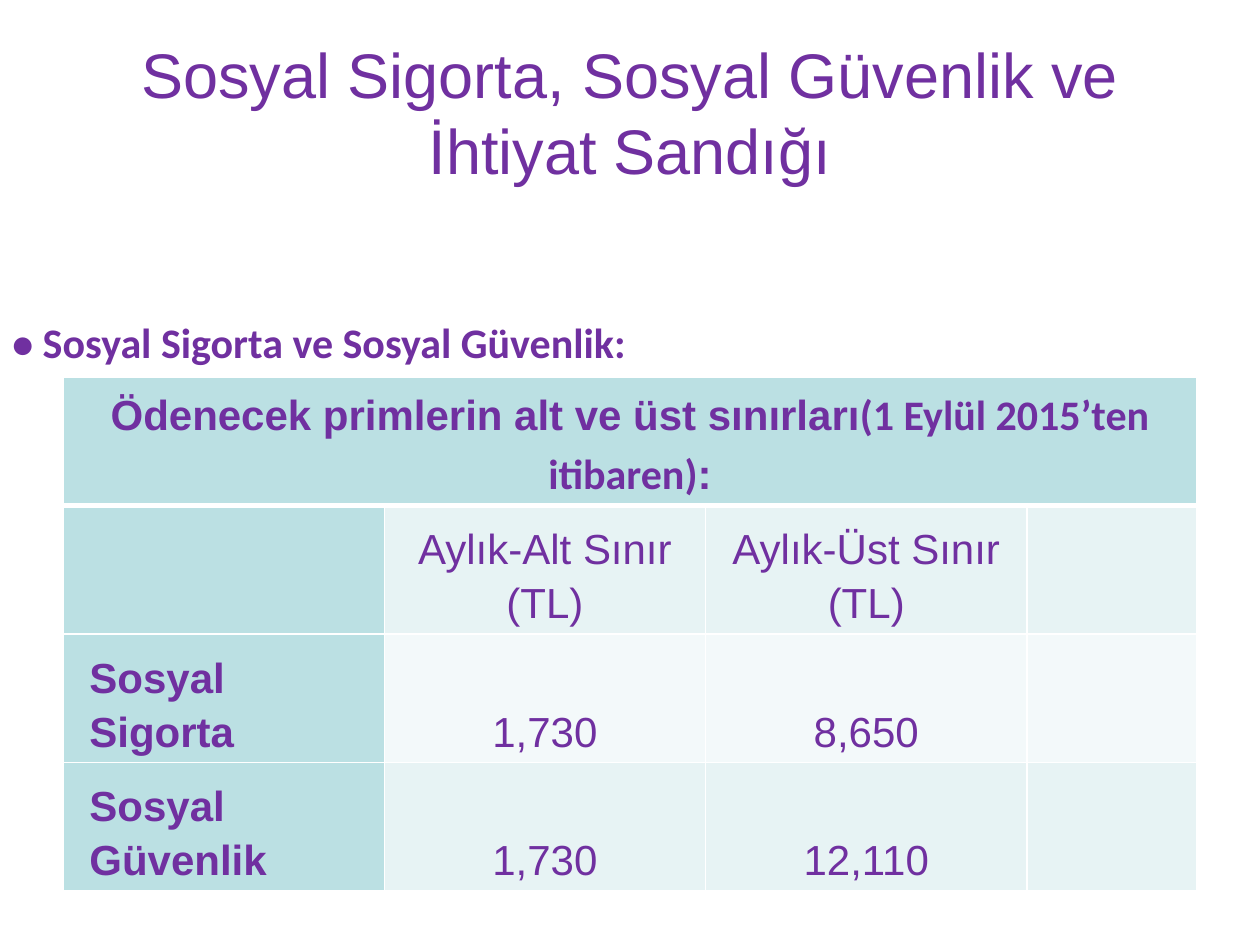
from lxml import etree
from pptx import Presentation
from pptx.dml.color import RGBColor
from pptx.enum import text
from pptx.oxml import ns
from pptx import util as u

# Content
TITLE = "Sosyal Sigorta, Sosyal Güvenlik ve İhtiyat Sandığı"
SUBTITLE = "• Sosyal Sigorta ve Sosyal Güvenlik:"
HEADING = [("Ödenecek primlerin alt ve üst sınırları", "Arial"),
           ("(1 Eylül 2015’ten itibaren)", "Calibri"), (":", "Arial")]
ROWS = [
    ["", "Aylık-Alt Sınır (TL)", "Aylık-Üst Sınır (TL)", ""],
    ["Sosyal Sigorta", "1,730", "8,650", ""],
    ["Sosyal Güvenlik", "1,730", "12,110", ""],
]

# Style and grid, in inches
PURPLE = RGBColor(0x70, 0x30, 0xA0)
TEAL = RGBColor(0xBB, 0xE0, 0xE3)
BANDS = [RGBColor(0xE7, 0xF3, 0xF4), RGBColor(0xF3, 0xF9, 0xFA)]
WIDTH, HEIGHT, MARGIN = 10, 7.5, 0.5
COLUMNS = [2.55, 2.55, 2.55, 1.35]
ROW_HEIGHT = 0.7
CENTER, LEFT = text.PP_ALIGN.CENTER, text.PP_ALIGN.LEFT


def write(frame, spans, font="Arial", size=24, bold=False, align=LEFT, spacing=None):
    """Fill a frame with one paragraph: a string, or (text, font) pairs."""
    if isinstance(spans, str):
        spans = [(spans, font)]
    frame.word_wrap = True
    para = frame.paragraphs[0]
    para.alignment = align
    para.line_spacing = spacing
    for words, name in spans:
        span = para.add_run()
        span.text = words
        span.font.name, span.font.size, span.font.bold = name, u.Pt(size), bold
        span.font.color.rgb = PURPLE


def add_text(page, words, place, anchor=text.MSO_ANCHOR.TOP, **style):
    box = page.shapes.add_textbox(*map(u.Inches, place))
    box.text_frame.vertical_anchor = anchor
    write(box.text_frame, words, **style)


def set_borders(cell, bottom):
    properties = cell._tc.get_or_add_tcPr()
    widths = [("lnL", 1), ("lnR", 1), ("lnT", 1), ("lnB", bottom)]
    for position, (tag, points) in enumerate(widths):
        line = etree.Element(ns.qn("a:" + tag), w=str(u.Pt(points)))
        fill = etree.SubElement(line, ns.qn("a:solidFill"))
        etree.SubElement(fill, ns.qn("a:srgbClr"), val="FFFFFF")
        properties.insert(position, line)


def style_cell(cell, words, fill, bottom=1, **style):
    cell.fill.solid()
    cell.fill.fore_color.rgb = fill
    set_borders(cell, bottom)
    if words:
        cell.vertical_anchor = text.MSO_ANCHOR.BOTTOM
        cell.margin_left = cell.margin_right = u.Inches(0.21)
        write(cell.text_frame, words, spacing=1.15, **style)


def add_limits_table(page):
    table = page.shapes.add_table(
        len(ROWS) + 1, len(COLUMNS), u.Inches(MARGIN), u.Inches(2.99),
        u.Inches(sum(COLUMNS)), u.Inches(ROW_HEIGHT * (len(ROWS) + 1))).table
    for column, width in zip(table.columns, COLUMNS):
        column.width = u.Inches(width)

    # Heading across all columns
    for index in range(len(COLUMNS)):
        style_cell(table.cell(0, index), HEADING if index == 0 else "", TEAL,
                   bottom=3, bold=True, align=CENTER)
    table.cell(0, 0).merge(table.cell(0, len(COLUMNS) - 1))

    # Label column and banded values
    for row, values in enumerate(ROWS):
        for index, words in enumerate(values):
            label = index == 0
            style_cell(table.cell(row + 1, index), words,
                       TEAL if label else BANDS[row % 2],
                       bold=label, align=LEFT if label else CENTER)


def main():
    deck = Presentation()
    deck.slide_width, deck.slide_height = u.Inches(WIDTH), u.Inches(HEIGHT)
    page = deck.slides.add_slide(deck.slide_layouts[6])
    add_text(page, TITLE, (MARGIN, 0.3, WIDTH - 2 * MARGIN, 1.17),
             anchor=text.MSO_ANCHOR.MIDDLE, size=36, align=CENTER)
    add_limits_table(page)
    add_text(page, SUBTITLE, (0, 2.46, 10.54, 0.5), font="Calibri", bold=True)
    deck.save("out.pptx")


if __name__ == "__main__":
    main()
